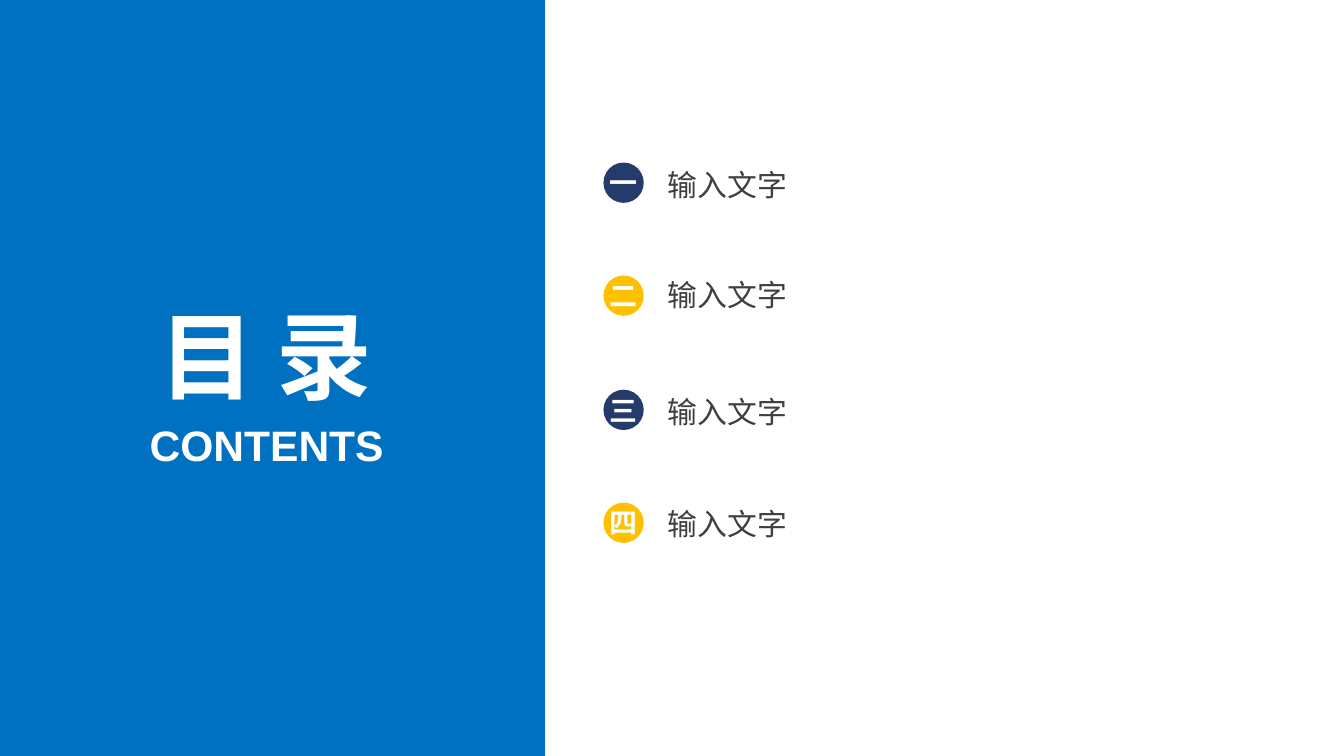
from pptx import Presentation
from pptx.dml.color import RGBColor
from pptx.enum.shapes import MSO_SHAPE
from pptx.enum.text import MSO_ANCHOR, PP_ALIGN
from pptx.util import Inches, Pt

RECTANGLE, OVAL = MSO_SHAPE.RECTANGLE, MSO_SHAPE.OVAL
TOP, MIDDLE = MSO_ANCHOR.TOP, MSO_ANCHOR.MIDDLE
LEFT, CENTER = PP_ALIGN.LEFT, PP_ALIGN.CENTER

COLORS = {
    "panel": "0070C0",
    "navy": "253B6B",
    "gold": "FFC000",
    "white": "FFFFFF",
    "text": "3F3F3F",
}
FONT = "Arial"
SLIDE_WIDTH = 10
SLIDE_HEIGHT = SLIDE_WIDTH * 9 / 16

# text, box (left, top, width, height), size, anchor
HEADINGS = [
    ("目 录", (0.96, 2.21, 2.04, 0.86), 51.2, MIDDLE),
    ("CONTENTS", (1.08, 3.12, 1.81, 0.38), 22.8, TOP),
]
# number, label, badge top, label top, label width
ENTRIES = [
    ("一", "输入文字", 1.21, 1.24, 3.18),
    ("二", "输入文字", 2.05, 2.06, 2.58),
    ("三", "输入文字", 2.9, 2.93, 3.06),
    ("四", "输入文字", 3.74, 3.76, 2.58),
]
BADGE_COLORS = ["navy", "gold"]
BADGE_LEFT, BADGE_SIZE = 4.49, 0.3
LABEL_LEFT, LABEL_HEIGHT = 4.97, 0.27


def rgb(name):
    return RGBColor.from_string(COLORS[name])


def add_filled_shape(slide, kind, box, color):
    shape = slide.shapes.add_shape(kind, *map(Inches, box))
    shape.shadow.inherit = False
    shape.fill.solid()
    shape.fill.fore_color.rgb = rgb(color)
    shape.line.fill.background()
    return shape


def write_text(shape, text, size, color, bold=True, align=CENTER, anchor=MIDDLE):
    frame = shape.text_frame
    frame_format = {
        "margin_left": 0, "margin_top": 0, "margin_right": 0, "margin_bottom": 0,
        "word_wrap": True, "vertical_anchor": anchor,
    }
    for name, value in frame_format.items():
        setattr(frame, name, value)
    paragraph = frame.paragraphs[0]
    paragraph.alignment = align
    run = paragraph.add_run()
    run.text = text
    for name, value in {"name": FONT, "size": Pt(size), "bold": bold}.items():
        setattr(run.font, name, value)
    run.font.color.rgb = rgb(color)


def add_text(slide, text, box, size, color, **text_format):
    text_box = slide.shapes.add_textbox(*map(Inches, box))
    write_text(text_box, text, size, color, **text_format)


def main():
    presentation = Presentation()
    presentation.slide_width = Inches(SLIDE_WIDTH)
    presentation.slide_height = Inches(SLIDE_HEIGHT)
    slide = presentation.slides.add_slide(presentation.slide_layouts[6])

    panel = add_filled_shape(slide, RECTANGLE, (-0.06, 0, 4.1, SLIDE_HEIGHT), "panel")
    panel.line.color.rgb = rgb("panel")
    panel.line.width = Pt(2)

    for text, box, size, anchor in HEADINGS:
        add_text(slide, text, box, size, "white", anchor=anchor)

    for index, (number, label, badge_top, label_top, label_width) in enumerate(ENTRIES):
        badge_box = (BADGE_LEFT, badge_top, BADGE_SIZE, BADGE_SIZE)
        color = BADGE_COLORS[index % len(BADGE_COLORS)]
        badge = add_filled_shape(slide, OVAL, badge_box, color)
        write_text(badge, number, 15, "white")
        label_box = (LABEL_LEFT, label_top, label_width, LABEL_HEIGHT)
        add_text(slide, label, label_box, 16, "text", bold=False, align=LEFT)

    presentation.save("out.pptx")


if __name__ == "__main__":
    main()
